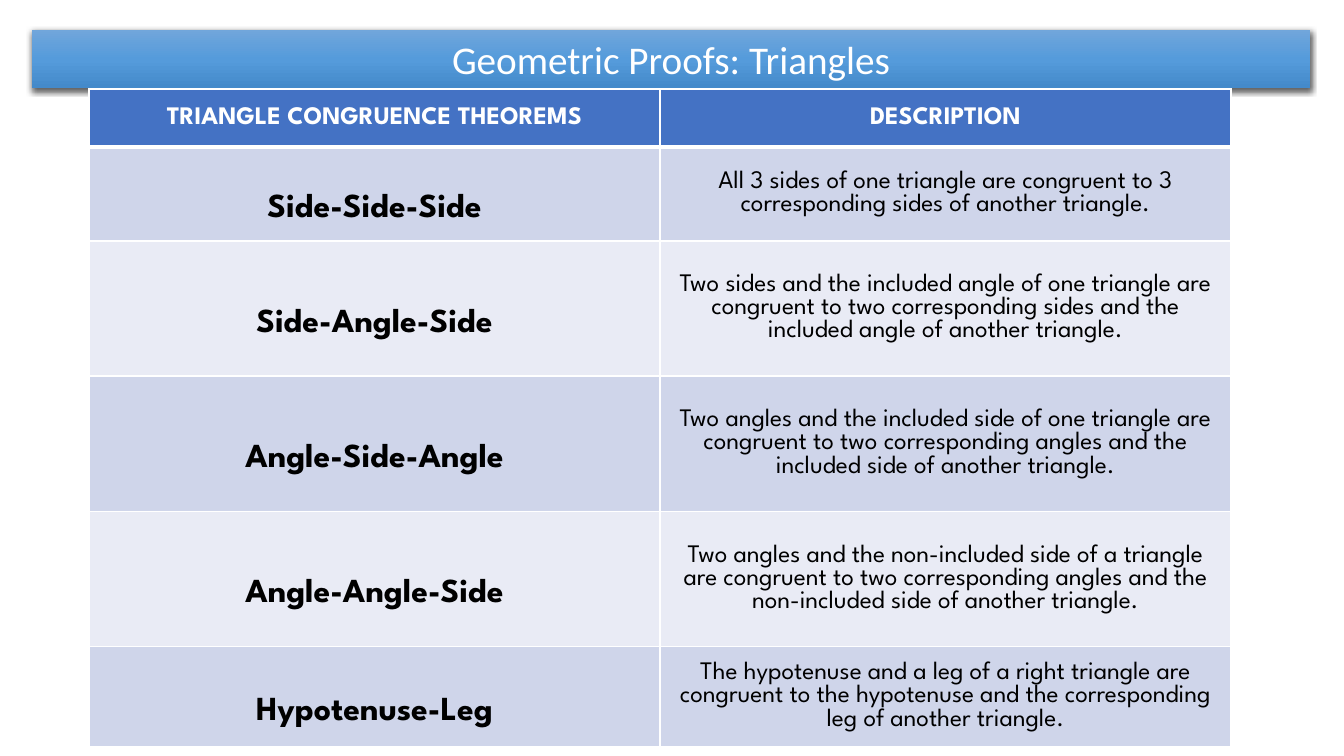
from pptx import Presentation
from pptx.dml.color import RGBColor
from pptx.enum.shapes import MSO_SHAPE
from pptx.enum.text import MSO_ANCHOR, PP_ALIGN
from pptx.oxml import parse_xml
from pptx.oxml.ns import nsdecls
from pptx.util import Pt

PX = 914400 / 100.8
WHITE, BLACK = "FFFFFF", "000000"
HEADER_FILL = "4472C4"
BAND_FILLS = ["CFD5EA", "E9EBF5"]
BANNER_STOPS = [(0, "71A6DB"), (50, "559BDB"), (100, "448ACA")]

HEADINGS = ("TRIANGLE CONGRUENCE THEOREMS", "DESCRIPTION")
THEOREMS = [
    ("Side-Side-Side",
     "All 3 sides of one triangle are congruent to 3 corresponding sides of another triangle."),
    ("Side-Angle-Side",
     "Two sides and the included angle of one triangle are congruent to two corresponding "
     "sides and the included angle of another triangle."),
    ("Angle-Side-Angle",
     "Two angles and the included side of one triangle are congruent to two corresponding "
     "angles and the included side of another triangle."),
    ("Angle-Angle-Side",
     "Two angles and the non-included side of a triangle are congruent to two corresponding "
     "angles and the non-included side of another triangle."),
    ("Hypotenuse-Leg",
     "The hypotenuse and a leg of a right triangle are congruent to the hypotenuse and the "
     "corresponding leg of another triangle."),
]
ROW_HEIGHTS = [58, 94, 135, 136, 135, 100]
COLUMN_WIDTH = 571
NAME_DROP = 36  # top margin that sets theorem names below the row's middle


def px(*lengths):
    """Turn pixel lengths into EMU."""
    return [round(length * PX) for length in lengths]


def write_text(frame, text, size, color, font="League Spartan", bold=False):
    para = frame.paragraphs[0]
    para.alignment = PP_ALIGN.CENTER
    span = para.add_run()
    span.text = text
    span.font.name = font
    span.font.size = Pt(size)
    span.font.bold = bold
    span.font.color.rgb = RGBColor.from_string(color)


deck = Presentation()
deck.slide_width, deck.slide_height = px(1344, 756)
page = deck.slides.add_slide(deck.slide_layouts[6])

# Title banner
banner = page.shapes.add_shape(MSO_SHAPE.RECTANGLE, *px(32, 30, 1278, 58))
banner.line.fill.background()
banner.shadow.inherit = False
stops = "".join(f'<a:gs pos="{place * 1000}"><a:srgbClr val="{color}"/></a:gs>'
                for place, color in BANNER_STOPS)
banner.line._ln.addprevious(parse_xml(
    f'<a:gradFill {nsdecls("a")} rotWithShape="1"><a:gsLst>{stops}</a:gsLst>'
    '<a:lin ang="5400000" scaled="0"/></a:gradFill>'))
banner._element.spPr.find("{*}effectLst").append(parse_xml(
    f'<a:outerShdw {nsdecls("a")} blurRad="57150" dist="19050" dir="5400000" algn="ctr" '
    f'rotWithShape="0"><a:srgbClr val="{BLACK}"><a:alpha val="63000"/></a:srgbClr></a:outerShdw>'))
banner.text_frame.word_wrap = True
banner.text_frame.vertical_anchor = MSO_ANCHOR.MIDDLE
write_text(banner.text_frame, "Geometric Proofs: Triangles", 28, WHITE, font="Calibri")

# Theorem table
table = page.shapes.add_table(
    len(ROW_HEIGHTS), 2, *px(89, 89, 2 * COLUMN_WIDTH, sum(ROW_HEIGHTS))).table
for column in table.columns:
    column.width = px(COLUMN_WIDTH)[0]
for row, height in zip(table.rows, ROW_HEIGHTS):
    row.height = px(height)[0]

for row_index, texts in enumerate([HEADINGS, *THEOREMS]):
    is_header = row_index == 0
    for column_index, text in enumerate(texts):
        cell = table.cell(row_index, column_index)
        is_name = column_index == 0 and not is_header
        cell.vertical_anchor = MSO_ANCHOR.MIDDLE
        if is_name:
            cell.margin_top = px(NAME_DROP)[0]
        write_text(cell.text_frame, text, 24 if is_name else 18,
                   WHITE if is_header else BLACK, bold=is_header or is_name)
        cell.fill.solid()
        cell.fill.fore_color.rgb = RGBColor.from_string(
            HEADER_FILL if is_header else BAND_FILLS[(row_index - 1) % 2])
        for order, side in enumerate("LRTB"):
            under_header = (row_index, side) in [(0, "B"), (1, "T")]
            cell._tc.tcPr.insert(order, parse_xml(
                f'<a:ln{side} {nsdecls("a")} w="{Pt(3 if under_header else 1)}">'
                f'<a:solidFill><a:srgbClr val="{WHITE}"/></a:solidFill></a:ln{side}>'))

deck.save("out.pptx")
